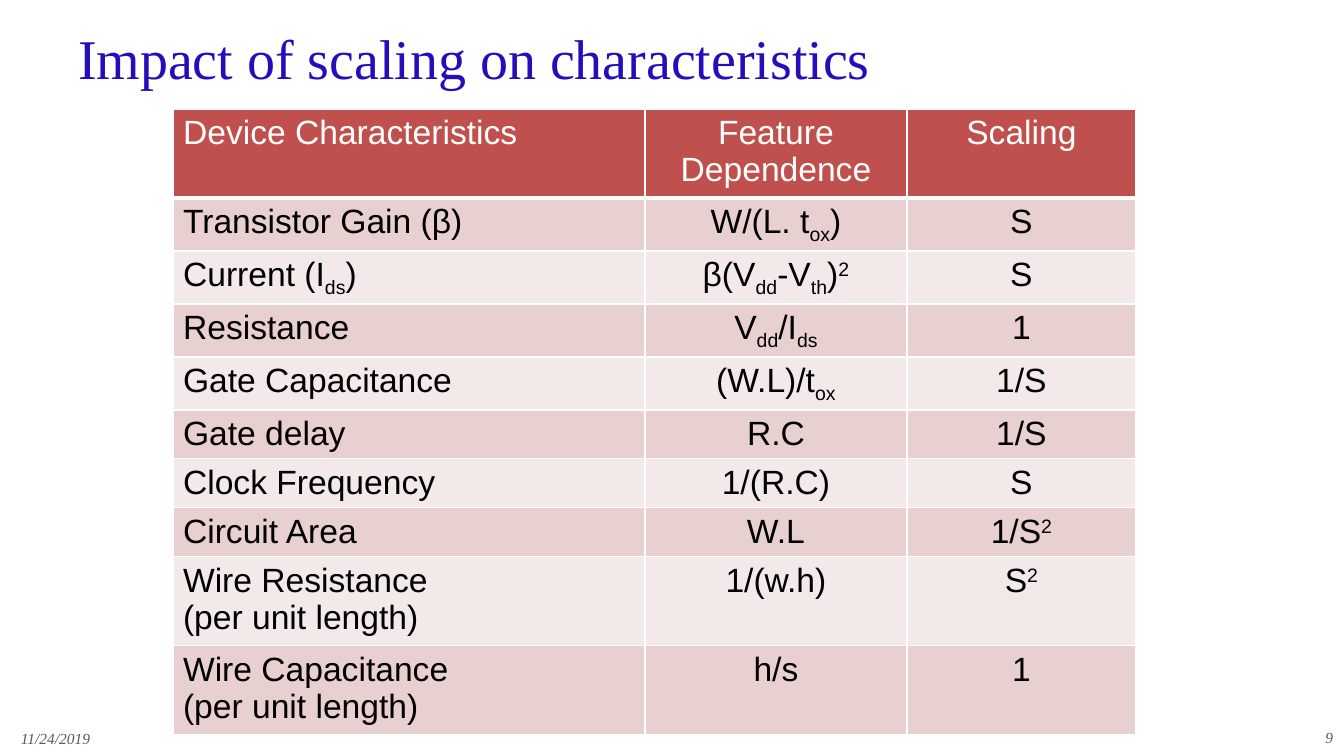
from dataclasses import dataclass
from typing import NamedTuple

from lxml.etree import SubElement
from pptx import Presentation
from pptx.dml.color import RGBColor
from pptx.enum.text import MSO_ANCHOR, PP_ALIGN
from pptx.oxml.ns import qn
from pptx.util import Emu, Pt

EMU_PER_PX = 914400 / 100.8
SERIF, SANS = "Times New Roman", "Arial"
WHITE, BLACK, GREY, BLUE = "FFFFFF", "000000", "595959", "230EBC"
HEADER_FILL, BAND_FILLS = "C0504D", ("E8D0D0", "F4E9E9")


class Box(NamedTuple):
    left: int
    top: int
    width: int
    height: int


class Span(NamedTuple):
    text: str
    baseline: int = 0


@dataclass(frozen=True)
class Style:
    font: str
    size: int
    colour: str
    italic: bool = False


@dataclass(frozen=True)
class Row:
    height: int
    cells: tuple


@dataclass(frozen=True)
class Footer:
    text: str
    box: Box
    align: PP_ALIGN


def sub(text: str) -> Span:
    return Span(text, -25000)


def sup(text: str) -> Span:
    return Span(text, 30000)


TITLE_STYLE = Style(SERIF, 40, BLUE)
FOOTER_STYLE = Style(SERIF, 11, GREY, italic=True)
TITLE_BOX = Box(68, 7, 1210, 101)
TABLE_BOX = Box(173, 109, 963, 626)
COLUMN_WIDTHS = (472, 262, 229)
PLAIN, INDEXED, DOUBLE = 49, 53, 89

# Each cell is a list of spans; "\n" stands for a line break.
ROWS = (
    Row(DOUBLE, (["Device Characteristics"], ["Feature Dependence"], ["Scaling"])),
    Row(INDEXED, (["Transistor Gain (β)"], ["W/(L. t", sub("ox"), ")"], ["S"])),
    Row(INDEXED, (["Current (I", sub("ds"), ")"],
                  ["β(V", sub("dd"), "-V", sub("th"), ")", sup("2")], ["S"])),
    Row(INDEXED, (["Resistance"], ["V", sub("dd"), "/I", sub("ds")], ["1"])),
    Row(INDEXED, (["Gate Capacitance"], ["(W.L)/t", sub("ox")], ["1/S"])),
    Row(PLAIN, (["Gate delay"], ["R.C"], ["1/S"])),
    Row(PLAIN, (["Clock Frequency"], ["1/(R.C)"], ["S"])),
    Row(PLAIN, (["Circuit Area"], ["W.L"], ["1/S", sup("2")])),
    Row(DOUBLE, (["Wire Resistance", "\n", "(per unit length)"],
                 ["1/(w.h)"], ["S", sup("2")])),
    Row(DOUBLE, (["Wire Capacitance", "\n", "(per unit length)"], ["h/s"], ["1"])),
)
FOOTERS = (
    Footer("11/24/2019", Box(11, 728, 313, 20), PP_ALIGN.LEFT),
    Footer("9", Box(1030, 727, 313, 21), PP_ALIGN.RIGHT),
)


def px(length: int) -> Emu:
    return Emu(round(length * EMU_PER_PX))


def rgb(colour: str) -> RGBColor:
    return RGBColor.from_string(colour)


def write(para, spans, style: Style, align: PP_ALIGN = PP_ALIGN.LEFT) -> None:
    para.alignment = align
    for item in spans:
        if item == "\n":
            para.add_line_break()
            continue
        span = item if isinstance(item, Span) else Span(item)
        run = para.add_run()
        run.text = span.text
        font = run.font
        font.name, font.size = style.font, Pt(style.size)
        font.bold, font.italic = False, style.italic
        font.color.rgb = rgb(style.colour)
        if span.baseline:
            run._r.get_or_add_rPr().set("baseline", str(span.baseline))


def add_borders(cell, bottom_width: int) -> None:
    properties = cell._tc.get_or_add_tcPr()
    for side, width in (("L", 1), ("R", 1), ("T", 1), ("B", bottom_width)):
        line = SubElement(properties, qn(f"a:ln{side}"), w=str(Pt(width)))
        fill = SubElement(line, qn("a:solidFill"))
        SubElement(fill, qn("a:srgbClr"), val=WHITE)


def add_title(page) -> None:
    title = page.shapes.title
    title.left, title.top, title.width, title.height = map(px, TITLE_BOX)
    title.text_frame.vertical_anchor = MSO_ANCHOR.MIDDLE
    write(title.text_frame.paragraphs[0], ["Impact of scaling on characteristics"],
          TITLE_STYLE)


def add_scaling_table(page) -> None:
    frame = page.shapes.add_table(len(ROWS), len(COLUMN_WIDTHS), *map(px, TABLE_BOX))
    table = frame.table
    for column, width in zip(table.columns, COLUMN_WIDTHS):
        column.width = px(width)
    for row_index, row in enumerate(ROWS):
        table.rows[row_index].height = px(row.height)
        is_header = row_index == 0
        fill = HEADER_FILL if is_header else BAND_FILLS[(row_index - 1) % 2]
        style = Style(SANS, 24, WHITE if is_header else BLACK)
        for column_index, spans in enumerate(row.cells):
            cell = table.cell(row_index, column_index)
            add_borders(cell, bottom_width=3 if is_header else 1)
            cell.fill.solid()
            cell.fill.fore_color.rgb = rgb(fill)
            align = PP_ALIGN.CENTER if column_index else PP_ALIGN.LEFT
            write(cell.text_frame.paragraphs[0], spans, style, align)


def add_footer(page, footer: Footer) -> None:
    frame = page.shapes.add_textbox(*map(px, footer.box)).text_frame
    frame.word_wrap = True
    frame.vertical_anchor = MSO_ANCHOR.MIDDLE
    write(frame.paragraphs[0], [footer.text], FOOTER_STYLE, footer.align)


def main() -> None:
    deck = Presentation()
    deck.slide_width, deck.slide_height = px(1344), px(756)
    page = deck.slides.add_slide(deck.slide_layouts.get_by_name("Title Only"))
    add_title(page)
    add_scaling_table(page)
    for footer in FOOTERS:
        add_footer(page, footer)
    deck.save("out.pptx")


if __name__ == "__main__":
    main()
